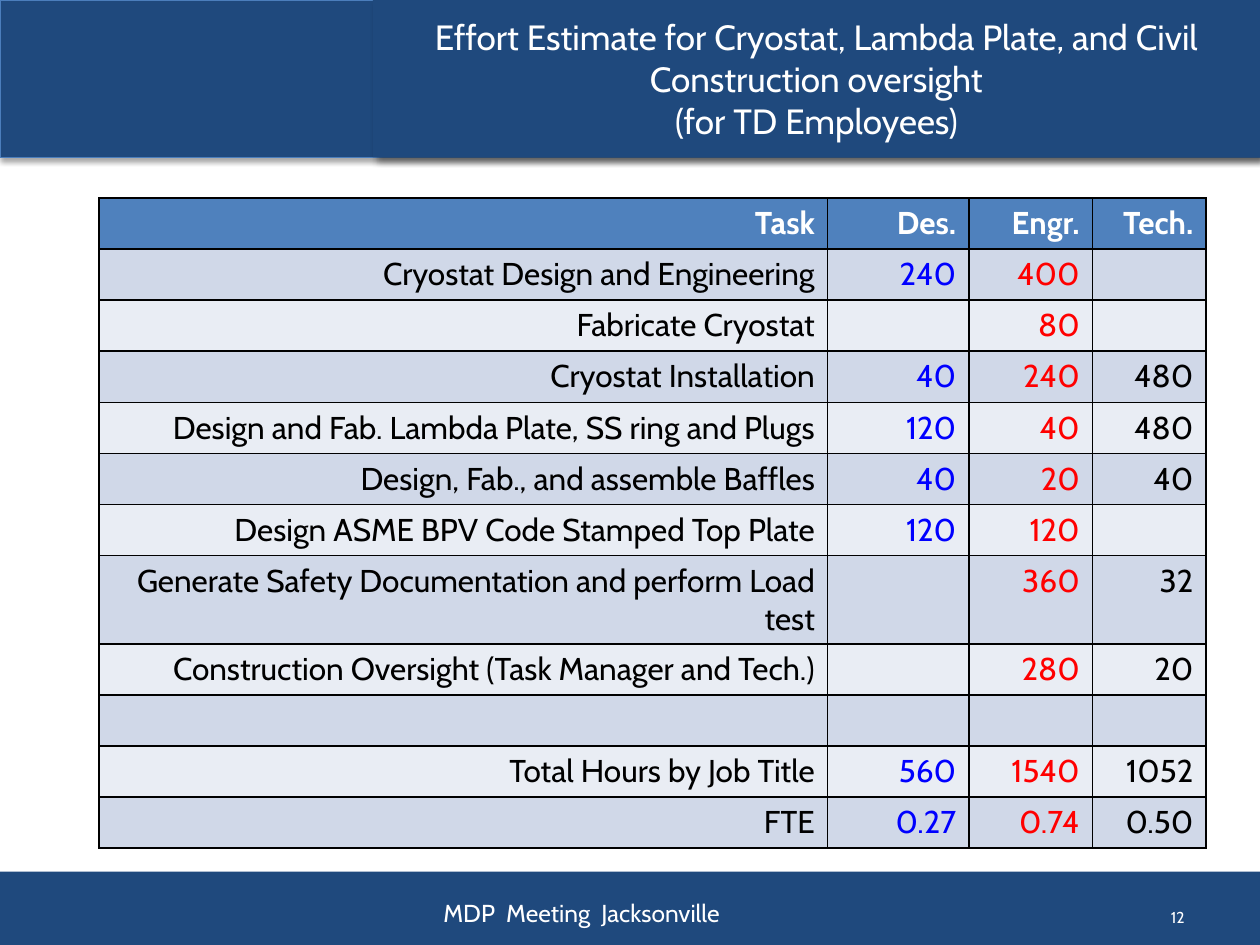
from lxml import etree
from pptx import Presentation
from pptx.dml.color import RGBColor
from pptx.enum.shapes import MSO_SHAPE as Shape
from pptx.enum.text import MSO_ANCHOR as Anchor, PP_ALIGN as Align
from pptx.oxml.ns import qn
from pptx.util import Cm, Pt

COLORS = {
    "navy": "1F497D", "edge": "4B7EBC", "header": "4F81BD",
    "band": "D0D8E8", "light": "E9EDF4", "white": "FFFFFF",
    "black": "000000", "blue": "0000FF", "red": "FF0000",
}
COLUMN_COLORS = ["black", "blue", "red", "black"]
COLUMN_WIDTHS = [14.68, 2.85, 2.49, 2.29]
ROW_HEIGHT = 1.03
ROWS = [
    ("Task", "Des.", "Engr.", "Tech."),
    ("Cryostat Design and Engineering", "240", "400", ""),
    ("Fabricate Cryostat", "", "80", ""),
    ("Cryostat Installation", "40", "240", "480"),
    ("Design and Fab. Lambda Plate, SS ring and Plugs", "120", "40", "480"),
    ("Design, Fab., and assemble Baffles", "40", "20", "40"),
    ("Design ASME BPV Code Stamped Top Plate", "120", "120", ""),
    ("Generate Safety Documentation and perform Load test", "", "360", "32"),
    ("Construction Oversight (Task Manager and Tech.)", "", "280", "20"),
    ("", "", "", ""),
    ("Total Hours by Job Title", "560", "1540", "1052"),
    ("FTE", "0.27", "0.74", "0.50"),
]


def rgb(name):
    return RGBColor.from_string(COLORS[name])


class SlideBuilder:
    font = "Cabin"

    def __init__(self, slide):
        self.slide = slide

    def set_text(self, tf, text, size, color="white", align=Align.LEFT, bold=False):
        p = tf.paragraphs[0]
        p.text = text
        p.alignment = align
        for r in p.runs:
            r.font.name = self.font
            r.font.size = Pt(size)
            r.font.bold = bold
            r.font.color.rgb = rgb(color)

    def bar(self, left, top, width, height, line=None, shadow=None):
        """Add a navy bar; shadow is (opacity %, blur pt, distance pt, angle)."""
        sp = self.slide.shapes.add_shape(
            Shape.RECTANGLE, Cm(left), Cm(top), Cm(width), Cm(height))
        sp.fill.solid()
        sp.fill.fore_color.rgb = rgb("navy")
        if line:
            sp.line.color.rgb = rgb(line)
            sp.line.width = Pt(0.75)
        else:
            sp.line.fill.background()
        sp.shadow.inherit = False
        if shadow:
            opacity, blur, distance, angle = shadow
            effects = sp._element.spPr.find(qn("a:effectLst"))
            outer = etree.SubElement(
                effects, qn("a:outerShdw"), blurRad=str(Pt(blur)),
                dist=str(Pt(distance)), dir=str(angle * 60000),
                algn="ctr", rotWithShape="0")
            color = etree.SubElement(outer, qn("a:srgbClr"), val=COLORS["black"])
            etree.SubElement(color, qn("a:alpha"), val=str(opacity * 1000))
        return sp

    def text(self, left, top, width, height, text, size,
             align=Align.LEFT, anchor=Anchor.TOP):
        sp = self.slide.shapes.add_textbox(
            Cm(left), Cm(top), Cm(width), Cm(height))
        tf = sp.text_frame
        tf.word_wrap = True
        tf.vertical_anchor = anchor
        self.set_text(tf, text, size, align=align)

    def border(self, cell):
        tcPr = cell._tc.get_or_add_tcPr()
        for i, side in enumerate(("lnL", "lnR", "lnT", "lnB")):
            ln = etree.Element(qn(f"a:{side}"), w=str(Pt(1)))
            fill = etree.SubElement(ln, qn("a:solidFill"))
            etree.SubElement(fill, qn("a:srgbClr"), val=COLORS["black"])
            tcPr.insert(i, ln)

    def table(self, left, top, rows):
        table = self.slide.shapes.add_table(
            len(rows), len(COLUMN_WIDTHS), Cm(left), Cm(top),
            Cm(sum(COLUMN_WIDTHS)), Cm(ROW_HEIGHT * len(rows))).table
        for column, width in zip(table.columns, COLUMN_WIDTHS):
            column.width = Cm(width)
        for i, values in enumerate(rows):
            table.rows[i].height = Cm(ROW_HEIGHT)
            fill = "header" if i == 0 else "band" if i % 2 else "light"
            for j, value in enumerate(values):
                cell = table.cell(i, j)
                cell.fill.solid()
                cell.fill.fore_color.rgb = rgb(fill)
                self.border(cell)
                color = COLUMN_COLORS[j] if i else "white"
                self.set_text(cell.text_frame, value, 18, color,
                              Align.RIGHT, bold=i == 0)


def main():
    prs = Presentation()
    prs.slide_width, prs.slide_height = Cm(25.4), Cm(19.05)
    s = SlideBuilder(prs.slides.add_slide(prs.slide_layouts[6]))

    s.bar(0, 17.57, 25.45, 1.52)
    s.bar(0, 0, 25.4, 3.17, line="edge", shadow=(35, 3.1, 1.8, 90))
    s.text(22.68, 17.98, 1.45, 1.02, "12", 9, Align.RIGHT, Anchor.MIDDLE)

    title = s.bar(7.52, 0, 17.88, 3.17, shadow=(43, 4, 3, 45))
    tf = title.text_frame
    tf.word_wrap = True
    tf.vertical_anchor = Anchor.MIDDLE
    s.set_text(tf, "Effort Estimate for Cryostat, Lambda Plate, and Civil "
                   "Construction oversight\v(for TD Employees)", 20,
               align=Align.CENTER)

    s.table(2, 3.99, ROWS)
    s.text(8.69, 17.98, 11.28, 1.02, "MDP  Meeting  Jacksonville", 14)
    prs.save("out.pptx")


if __name__ == "__main__":
    main()
